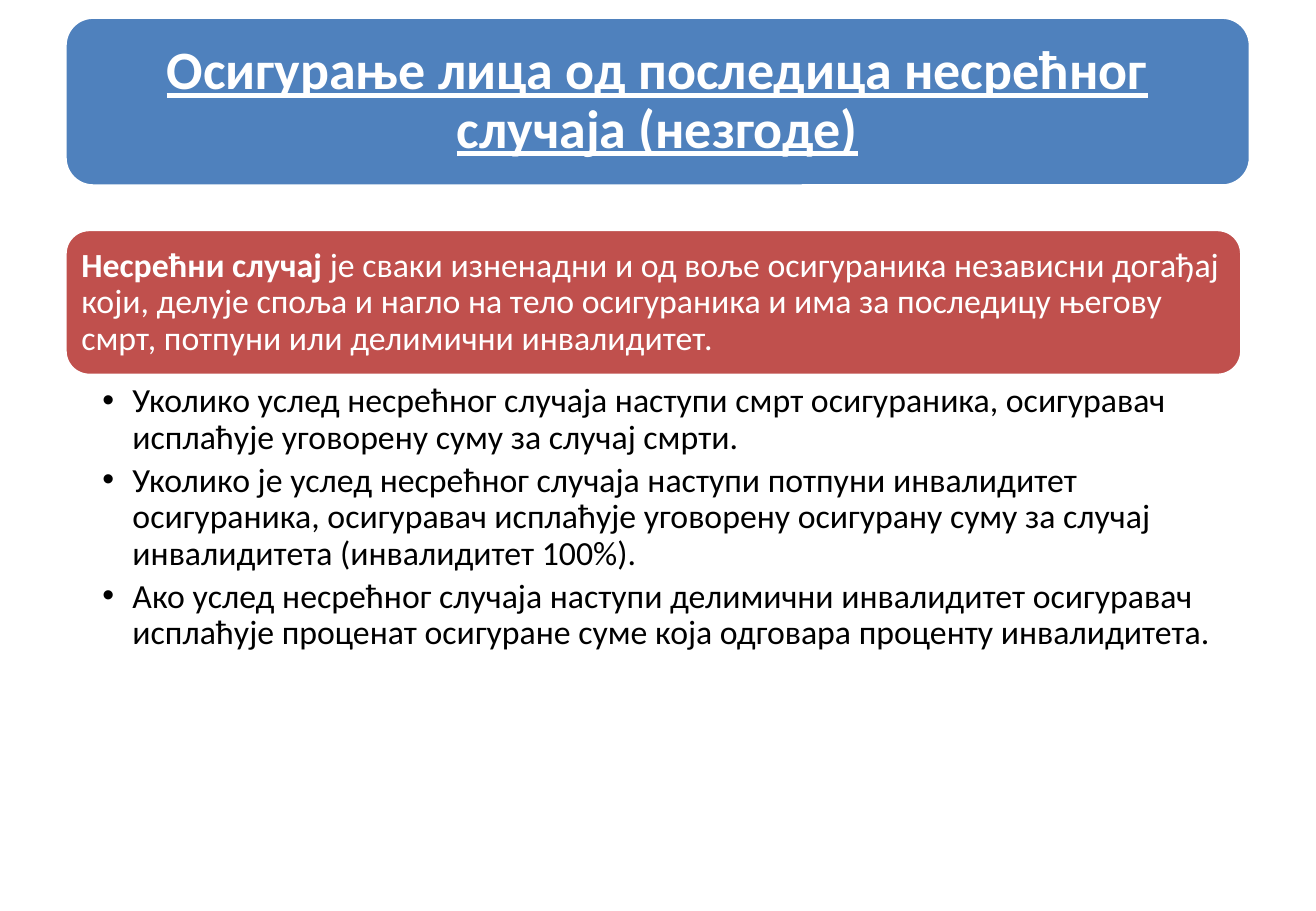
from lxml import etree
from pptx import Presentation
from pptx.dml.color import RGBColor
from pptx.enum.shapes import MSO_SHAPE
from pptx.enum.text import MSO_ANCHOR, MSO_AUTO_SIZE, PP_ALIGN
from pptx.oxml.ns import qn
from pptx.util import Cm, Pt

ROUND_RECT = MSO_SHAPE.ROUNDED_RECTANGLE
MIDDLE, TOP = MSO_ANCHOR.MIDDLE, MSO_ANCHOR.TOP
LEFT, CENTER = PP_ALIGN.LEFT, PP_ALIGN.CENTER
NO_FIT = MSO_AUTO_SIZE.NONE

BLUE = RGBColor(0x4F, 0x81, 0xBD)
RED = RGBColor(0xC0, 0x50, 0x4D)
WHITE = RGBColor(0xFF, 0xFF, 0xFF)
BLACK = RGBColor(0x00, 0x00, 0x00)

TITLE = "Осигурање лица од последица несрећног случаја (незгоде)"
TERM = "Несрећни случај "
DEFINITION = (
    "је сваки изненадни и од воље осигураника независни догађај који, "
    "делује споља и нагло на тело осигураника и има за последицу његову "
    "смрт, потпуни или делимични инвалидитет."
)
OUTCOMES = [
    "Уколико услед несрећног случаја наступи смрт осигураника, осигуравач "
    "исплаћује уговорену суму за случај смрти.",
    "Уколико је услед несрећног случаја наступи потпуни инвалидитет "
    "осигураника, осигуравач исплаћује уговорену осигурану суму за случај "
    "инвалидитета (инвалидитет 100%).",
    "Ако услед несрећног случаја наступи делимични инвалидитет осигуравач "
    "исплаћује проценат осигуране суме која одговара проценту инвалидитета.",
]


class SlideBuilder:
    """Holds the text style and the current slide."""

    font = "Calibri"
    line_spacing = 0.9

    def __init__(self, prs):
        """Add a title-only slide."""
        self.s = prs.slides.add_slide(prs.slide_layouts[5])

    def panel(self, x, y, w, h, color):
        """Draw a rounded panel with a white outline."""
        sp = self.s.shapes.add_shape(ROUND_RECT, Cm(x), Cm(y), Cm(w), Cm(h))
        sp.shadow.inherit = False
        sp.fill.solid()
        sp.fill.fore_color.rgb = color
        sp.line.color.rgb = WHITE
        sp.line.width = Pt(2)

    def frame(self, sp, anchor, left, top, right, bottom):
        """Set wrapping, anchor and insets of a text frame."""
        tf = sp.text_frame
        tf.word_wrap = True
        tf.auto_size = NO_FIT
        tf.vertical_anchor = anchor
        tf.margin_left, tf.margin_top = Cm(left), Cm(top)
        tf.margin_right, tf.margin_bottom = Cm(right), Cm(bottom)
        return tf

    def paragraph(self, p, align=LEFT, after=0):
        """Set the alignment and spacing of a paragraph."""
        p.alignment = align
        p.line_spacing = self.line_spacing
        p.space_before = Pt(0)
        p.space_after = Pt(after)

    def run(self, p, text, size, color, bold=False, underline=False):
        """Add one styled run."""
        r = p.add_run()
        r.text = text
        r.font.name = self.font
        r.font.size = Pt(size)
        r.font.color.rgb = color
        r.font.bold = bold
        r.font.underline = underline

    def title(self, text, x, y, w, h):
        """Place the title in front of its panel."""
        sp = self.s.shapes.title
        sp.left, sp.top, sp.width, sp.height = Cm(x), Cm(y), Cm(w), Cm(h)
        sp.element.getparent().append(sp.element)
        p = self.frame(sp, MIDDLE, 0.33, 0.33, 0.33, 0.33).paragraphs[0]
        self.paragraph(p, CENTER)
        self.run(p, text, 32, WHITE, bold=True, underline=True)

    def definition(self, term, text, x, y, w, h):
        """Write a bold term followed by its definition."""
        sp = self.s.shapes.add_textbox(Cm(x), Cm(y), Cm(w), Cm(h))
        p = self.frame(sp, MIDDLE, 0.2, 0.2, 0.2, 0.2).paragraphs[0]
        self.paragraph(p)
        self.run(p, term, 20, WHITE, bold=True)
        self.run(p, text, 20, WHITE)

    def bullets(self, items, x, y, w, h):
        """Write a bulleted list."""
        sp = self.s.shapes.add_textbox(Cm(x), Cm(y), Cm(w), Cm(h))
        tf = self.frame(sp, TOP, 0.78, 0.07, 0.4, 0.07)
        for i, text in enumerate(items):
            p = tf.add_paragraph() if i else tf.paragraphs[0]
            self.paragraph(p, after=4)
            pPr = p._p.get_or_add_pPr()
            pPr.set("marL", str(Cm(0.63)))
            pPr.set("indent", str(-Cm(0.63)))
            etree.SubElement(pPr, qn("a:buFont")).set("typeface", "Arial")
            etree.SubElement(pPr, qn("a:buChar")).set("char", "•")
            self.run(p, text, 20, BLACK)


def main():
    """Build and save the slide."""
    prs = Presentation()
    prs.slide_width, prs.slide_height = Cm(27.51), Cm(19.05)
    slide = SlideBuilder(prs)
    slide.panel(1.36, 0.36, 24.78, 3.53, BLUE)
    slide.title(TITLE, 1.53, 0.53, 24.43, 3.19)
    slide.panel(1.36, 4.8, 24.6, 3.05, RED)
    slide.definition(TERM, DEFINITION, 1.5, 4.95, 24.3, 2.76)
    slide.bullets(OUTCOMES, 1.36, 7.95, 24.6, 5.98)
    prs.save("out.pptx")


if __name__ == "__main__":
    main()
